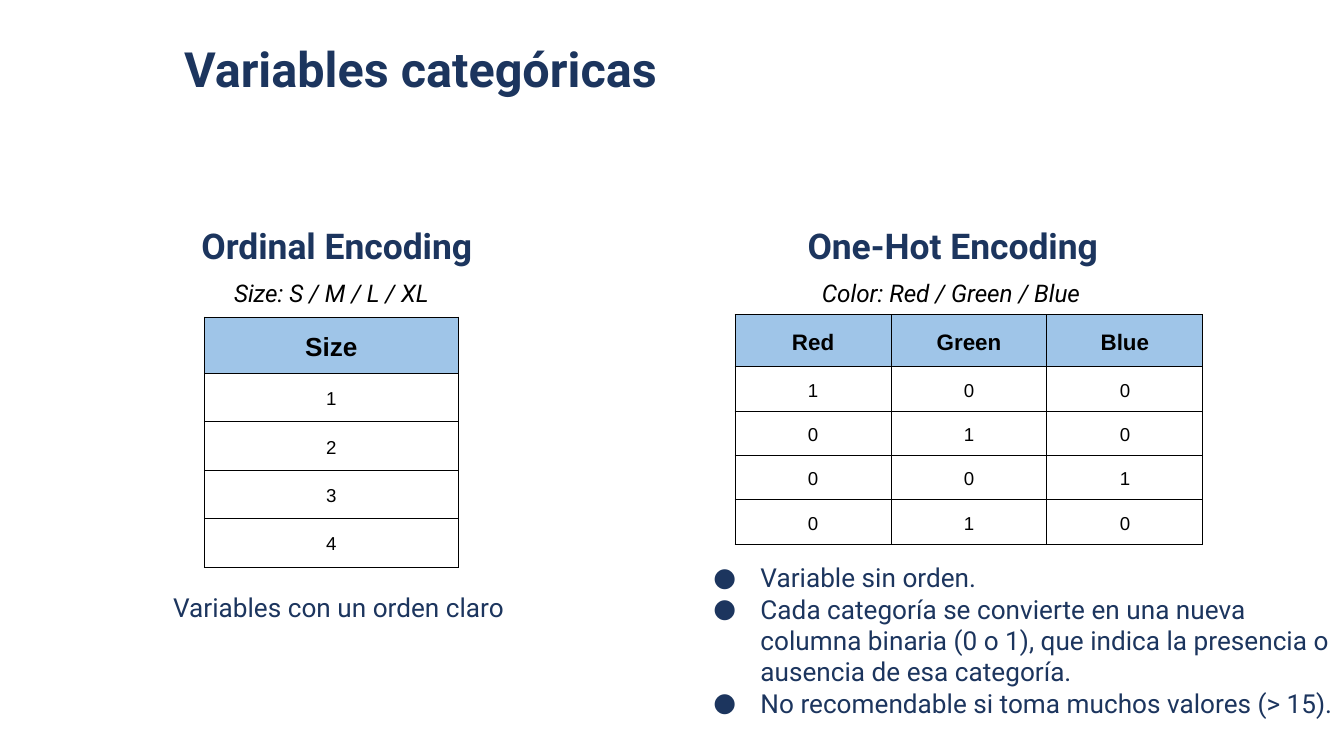
"""Build a slide comparing ordinal and one-hot encoding of categorical variables."""
from lxml.etree import SubElement
from pptx import Presentation
from pptx.dml.color import RGBColor
from pptx.enum.text import MSO_ANCHOR, PP_ALIGN
from pptx.oxml import parse_xml
from pptx.oxml.ns import nsdecls, qn
from pptx.util import Inches, Pt

NAVY, BLACK, HEADER_BLUE = "1C355E", "000000", "9FC5E8"


def color(value):
    return RGBColor.from_string(value)


def write(frame, text, size, hue=NAVY, font="Roboto", bold=False, italic=False,
          align=PP_ALIGN.LEFT, spacing=1.0):
    for index, line in enumerate(text.split("\n")):
        para = frame.add_paragraph() if index else frame.paragraphs[0]
        para.alignment = align
        para.line_spacing = spacing
        para.space_before = Pt(0)
        span = para.add_run()
        span.text = line
        span.font.name = font
        span.font.size = Pt(size)
        span.font.bold = bold
        span.font.italic = italic
        span.font.color.rgb = color(hue)


deck = Presentation()
deck.slide_width = Inches(10)
deck.slide_height = deck.slide_width * 9 // 16
page = deck.slides.add_slide(deck.slide_layouts[5])

heading = {"size": 19, "bold": True, "spacing": 1.15}
example = {"size": 13, "hue": BLACK, "italic": True, "align": PP_ALIGN.CENTER}
body = {"size": 14}
rules = (
    "Variable sin orden.\n"
    "Cada categoría se convierte en una nueva columna binaria (0 o 1), "
    "que indica la presencia o ausencia de esa categoría.\n"
    "No recomendable si toma muchos valores (> 15)."
)
texts = [
    ("Variables categóricas", (1.27, 0.19, 5.91, 1.12), {"size": 26, "bold": True}),
    ("Ordinal Encoding", (1.4, 1.52, 2.59, 0.61), heading),
    ("One-Hot Encoding", (5.91, 1.52, 2.59, 0.61), heading),
    ("Size: S / M / L / XL", (1.11, 1.97, 2.71, 0.5), example),
    ("Color: Red / Green / Blue", (5.72, 1.97, 2.71, 0.5), example),
    ("Variables con un orden claro", (1.19, 4.3, 2.8, 0.5), body),
    (rules, (5.06, 4.08, 5.09, 0.87), body),
]
for index, (text, place, style) in enumerate(texts):
    box = page.shapes.add_textbox(0, 0, 0, 0) if index else page.shapes.title
    box.left, box.top, box.width, box.height = map(Inches, place)
    frame = box.text_frame
    frame.word_wrap = True
    frame.vertical_anchor = MSO_ANCHOR.TOP
    frame.margin_left = frame.margin_right = Inches(0.1)
    frame.margin_top = frame.margin_bottom = Inches(0.1)
    write(frame, text, **style)

for para in frame.paragraphs:
    properties = para._p.get_or_add_pPr()
    properties.set("marL", str(Inches(0.5)))
    properties.set("indent", str(Inches(-0.35)))
    bullet_color = SubElement(properties, qn("a:buClr"))
    SubElement(bullet_color, qn("a:srgbClr"), val=NAVY)
    SubElement(properties, qn("a:buFont"), typeface="Roboto")
    SubElement(properties, qn("a:buChar"), char="●")

tables = [
    (["Size"], "1 2 3 4".split(), 1.52, 2.36, 1.89, 0.42, 0.36, 14),
    (["Red", "Green", "Blue"], ["100", "010", "001", "010"], 5.47, 2.34, 1.16, 0.39, 0.33, 12),
]
for header, records, left, top, column_width, header_height, row_height, header_size in tables:
    rows = [header, *records]
    height = header_height + row_height * len(records)
    table = page.shapes.add_table(len(rows), len(header), Inches(left), Inches(top),
                                  Inches(column_width * len(header)), Inches(height)).table
    for column in table.columns:
        column.width = Inches(column_width)
    for row_index, values in enumerate(rows):
        is_header = row_index == 0
        table.rows[row_index].height = Inches(header_height if is_header else row_height)
        for column_index, value in enumerate(values):
            cell = table.cell(row_index, column_index)
            write(cell.text_frame, value, header_size if is_header else 10, BLACK, "Arial",
                  bold=is_header, align=PP_ALIGN.CENTER, spacing=1.15)
            cell.vertical_anchor = MSO_ANCHOR.MIDDLE
            cell.margin_left = cell.margin_right = Inches(0.03)
            cell.margin_top = cell.margin_bottom = Inches(0.02)
            if is_header:
                cell.fill.solid()
                cell.fill.fore_color.rgb = color(HEADER_BLUE)
            else:
                cell.fill.background()
            for position, side in enumerate("LRTB"):
                border = parse_xml(
                    f'<a:ln{side} {nsdecls("a")} w="{Pt(0.6)}"><a:solidFill>'
                    f'<a:srgbClr val="{BLACK}"/></a:solidFill></a:ln{side}>')
                cell._tc.get_or_add_tcPr().insert(position, border)

deck.save("out.pptx")
